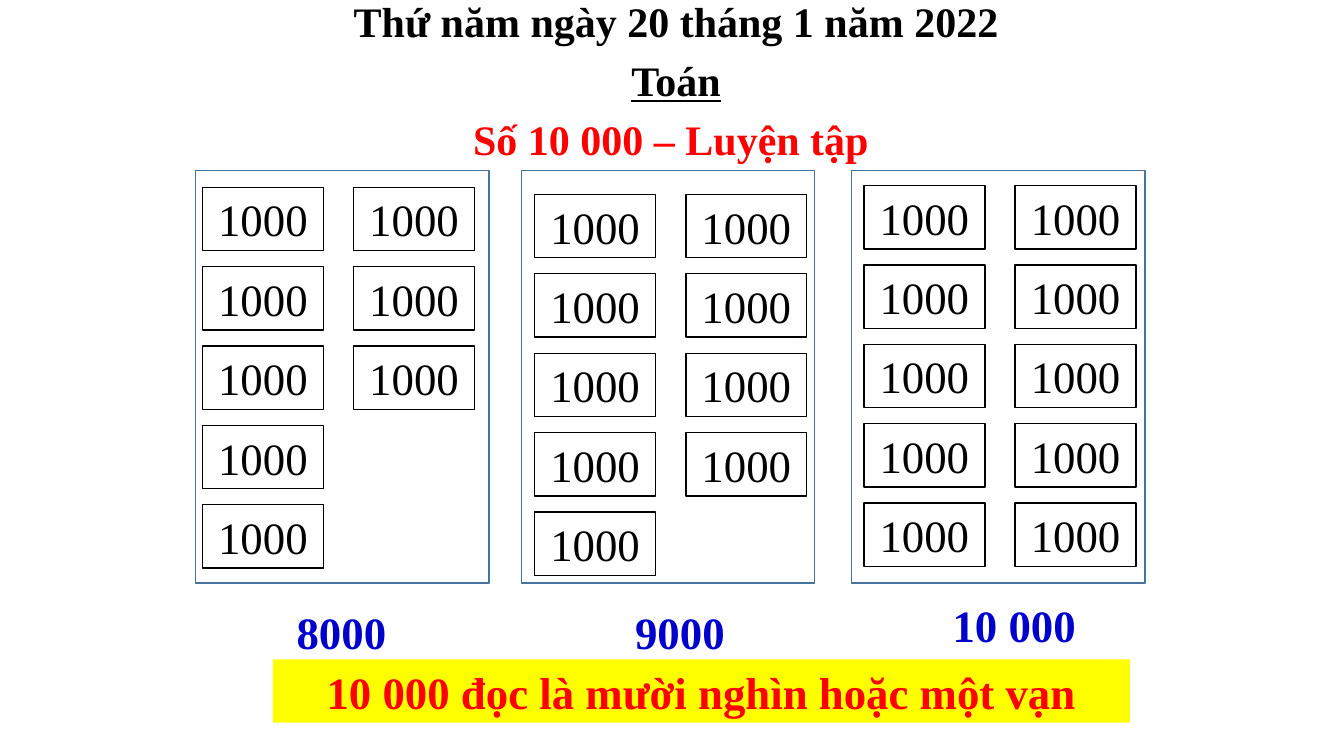
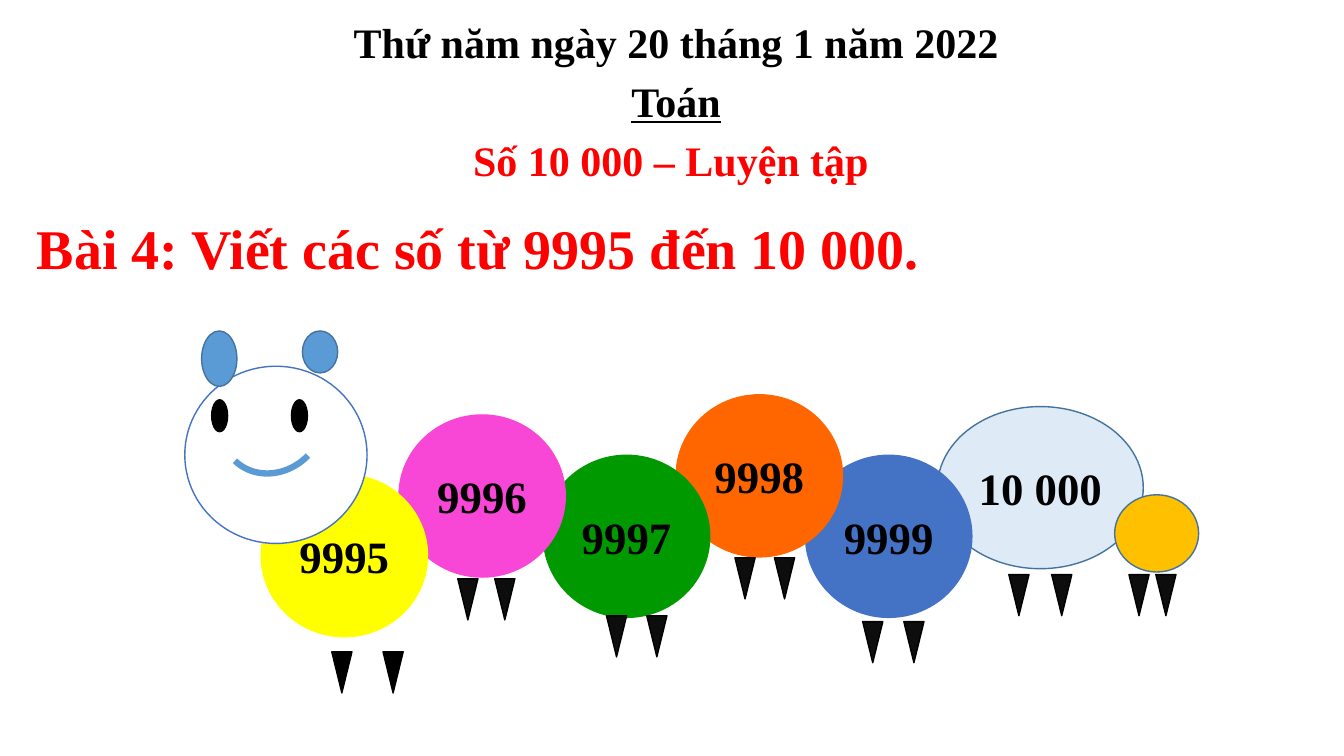
"""Build two maths slides: counting up to 10 000, and a number caterpillar."""
from lxml import etree
from pptx import Presentation
from pptx.dml.color import RGBColor
from pptx.enum.shapes import MSO_SHAPE
from pptx.enum.text import MSO_ANCHOR, PP_ALIGN
from pptx.oxml.ns import qn
from pptx.util import Inches, Pt

RECTANGLE, OVAL = MSO_SHAPE.RECTANGLE, MSO_SHAPE.OVAL
LEG, ARC = MSO_SHAPE.FLOWCHART_MERGE, MSO_SHAPE.ARC
CENTER, MIDDLE = PP_ALIGN.CENTER, MSO_ANCHOR.MIDDLE
FONT = "Times New Roman"
COLORS = {
    "black": "000000", "charcoal": "0D0D0D", "white": "FFFFFF", "red": "FF0000",
    "navy": "0000CC", "yellow": "FFFF00", "outline": "43739E", "sky": "5B9BD5",
    "blue": "4472C4", "pale": "DEEBF7", "orange": "FF6600", "green": "009900",
    "pink": "F846D6", "gold": "FFC000",
}

presentation = Presentation()
presentation.slide_width, presentation.slide_height = Inches(13.33), Inches(7.5)
COLUMN = presentation.slide_width / 160
ROW = presentation.slide_height / 90


def style_font(paragraph, size, color, bold=True):
    paragraph.font.name = FONT
    paragraph.font.size = Pt(size)
    paragraph.font.bold = bold
    paragraph.font.color.rgb = RGBColor.from_string(COLORS[color])


def add_figure(slide, kind, left, top, width, height, fill=None, line=None,
               text="", color="black", bold=True, line_width=1):
    shape = slide.shapes.add_shape(kind, int(left * COLUMN), int(top * ROW),
                                   int(width * COLUMN), int(height * ROW))
    shape.shadow.inherit = False
    if fill:
        shape.fill.solid()
        shape.fill.fore_color.rgb = RGBColor.from_string(COLORS[fill])
    else:
        shape.fill.background()
    if line:
        shape.line.color.rgb = RGBColor.from_string(COLORS[line])
        shape.line.width = Pt(line_width)
    else:
        shape.line.fill.background()
    if text:
        shape.text_frame.vertical_anchor = MIDDLE
        paragraph = shape.text_frame.paragraphs[0]
        paragraph.text = text
        paragraph.alignment = CENTER
        style_font(paragraph, 32, color, bold)
    return shape


blank_layout = presentation.slide_layouts[6]
counting = presentation.slides.add_slide(blank_layout)
caterpillar = presentation.slides.add_slide(blank_layout)

CARD_WIDTH, CARD_HEIGHT = 14.4, 7.55
CARD_COLUMN_STEP, CARD_ROW_STEP = 18, 9.45
panels = [
    (23.3, 24.1, 22.3, (5, 3), "8000", 30.5, 71.4),
    (62.05, 63.65, 23.15, (5, 4), "9000", 70.8, 71.4),
    (101.4, 102.85, 22.1, (5, 5), "10 000", 110.6, 70.6),
]
for panel_left, card_left, card_top, card_counts, total, total_left, total_top in panels:
    add_figure(counting, RECTANGLE, panel_left, 20.3, 34.9, 49.1, line="outline")
    for column, card_count in enumerate(card_counts):
        for row in range(card_count):
            add_figure(counting, RECTANGLE, card_left + column * CARD_COLUMN_STEP,
                       card_top + row * CARD_ROW_STEP, CARD_WIDTH, CARD_HEIGHT,
                       "white", "black", "1000", bold=False)
    add_figure(counting, RECTANGLE, total_left, total_top, 20.3, CARD_HEIGHT,
               "white", text=total, color="navy")
add_figure(counting, RECTANGLE, 32.5, 78.5, 102, CARD_HEIGHT, "yellow",
           text="10 000 đọc là mười nghìn hoặc một vạn", color="red")

exercise = caterpillar.shapes.add_textbox(int(3.2 * COLUMN), int(25.7 * ROW),
                                          int(142.8 * COLUMN), int(6.8 * ROW))
exercise.text_frame.word_wrap = True
paragraph = exercise.text_frame.paragraphs[0]
paragraph.text = "Bài 4: Viết các số từ 9995 đến 10 000."
paragraph.line_spacing = 0.9
paragraph.space_before = Pt(10)
style_font(paragraph, 40, "red")

segments = [
    (111.6, 48.4, 24.5, "pale", "outline", "10 000"),
    (95.9, 54.2, 19.8, "blue", "blue", "9999"),
    (80.5, 47, 19.8, "orange", "orange", "9998"),
    (64.7, 54.2, 19.8, "green", "green", "9997"),
    (47.5, 49.4, 19.8, "pink", "pink", "9996"),
    (31.1, 56.5, 19.8, "yellow", "yellow", "9995"),
]
for left, top, width, fill, line, number in segments:
    add_figure(caterpillar, OVAL, left, top, width, 19.3, fill, line, number)
add_figure(caterpillar, OVAL, 22, 43.6, 21.7, 21.1, "white", "blue")
add_figure(caterpillar, OVAL, 132.7, 58.9, 10, 9.2, "gold", "outline")

leg_pairs = [
    (39.5, 77.6, 6.1, "black"), (54.5, 68.9, 4.4, "charcoal"),
    (72.2, 73.3, 4.8, "charcoal"), (87.5, 66.4, 4.7, "charcoal"),
    (102.7, 74, 4.9, "charcoal"), (120.1, 68.4, 5.1, "charcoal"),
    (134.4, 68.4, 3.2, "charcoal"),
]
for left, top, gap, fill in leg_pairs:
    for leg_left in (left, left + gap):
        add_figure(caterpillar, LEG, leg_left, top, 2.4, 4.9, fill, "black")

for eye_left in (25.2, 34.7):
    add_figure(caterpillar, OVAL, eye_left, 47.6, 1.9, 3.8, "black", "black")
mouth = add_figure(caterpillar, ARC, 26, 44.4, 13, 11.6, line="sky", line_width=4.5)
mouth.rotation = 134.2
for antenna_left, antenna_height in ((24, 6.6), (36, 5)):
    add_figure(caterpillar, OVAL, antenna_left, 39.4, 4.2, antenna_height,
               "sky", "outline")

heading_lines = [
    ("Thứ năm ngày 20 tháng 1 năm 2022", "black", False),
    ("Toán", "black", True),
    ("Số 10 000 – Luyện tập ", "red", False),
]
for slide, heading_top in ((counting, -1.1), (caterpillar, 1.4)):
    heading = slide.shapes.add_textbox(int(23 * COLUMN), int(heading_top * ROW),
                                       int(115 * COLUMN), int(12 * ROW))
    frame = heading.text_frame
    frame.word_wrap = True
    frame.text = "\n".join(text for text, color, underline in heading_lines)
    for paragraph, (text, color, underline) in zip(frame.paragraphs, heading_lines):
        paragraph.alignment = CENTER
        style_font(paragraph, 30, color)
        paragraph.font.underline = underline
        space_before = etree.Element(qn("a:spcBef"))
        etree.SubElement(space_before, qn("a:spcPct"), val="20000")
        paragraph._p.get_or_add_pPr().insert(0, space_before)

presentation.save("out.pptx")
